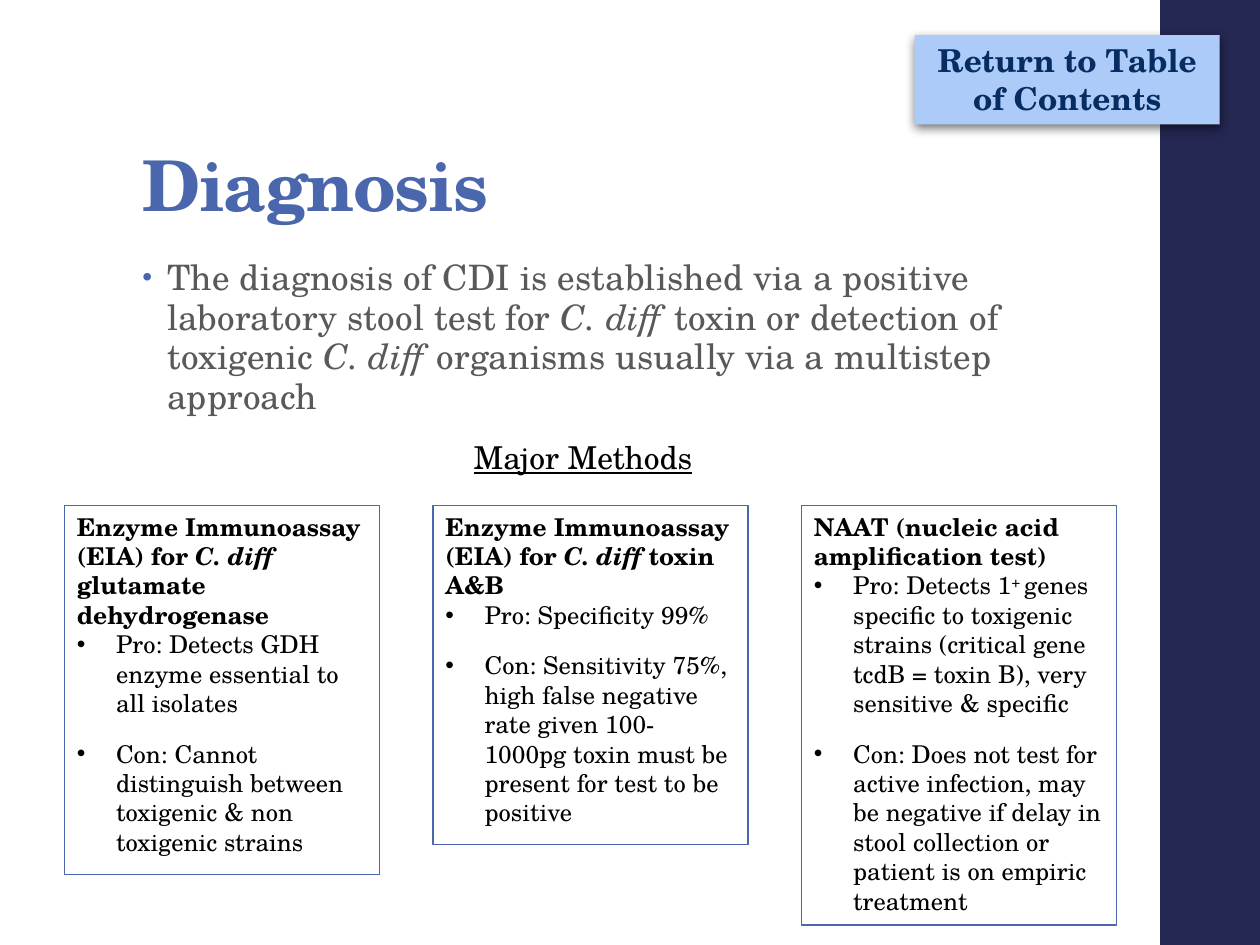
import pptx
import pptx.dml.color
import pptx.enum.shapes
import pptx.enum.text
import pptx.oxml
import pptx.oxml.ns
import pptx.util

Cm = pptx.util.Cm
Pt = pptx.util.Pt
Anchor = pptx.enum.text.MSO_ANCHOR
Align = pptx.enum.text.PP_ALIGN
AutoSize = pptx.enum.text.MSO_AUTO_SIZE

FONT = "TeX Gyre Schola"
COLORS = {
    "navy": "242852",
    "blue": "4A66AC",
    "button": "ACCBF9",
    "button text": "072C62",
    "gray": "595959",
    "black": "000000",
}
CARD_LEFT, CARD_TOP, CARD_WIDTH, CARD_PITCH = 1.3, 10.19, 6.35, 7.43

INTRO = [
    ("The diagnosis of CDI is established via a positive laboratory stool test for ", {}),
    ("C. diff ", {"italic": True}),
    ("toxin or detection of toxigenic ", {}),
    ("C. diff ", {"italic": True}),
    ("organisms usually via a multistep approach", {}),
]
METHODS = [
    (7.44,
     [("Enzyme Immunoassay (EIA) for ", {}), ("C. diff ", {"italic": True}),
      ("glutamate dehydrogenase", {})],
     [("Pro: Detects GDH enzyme essential to all isolates", {})],
     [("Con: Cannot distinguish between toxigenic & non toxigenic strains", {})]),
    (6.83,
     [("Enzyme Immunoassay (EIA) for ", {}), ("C. diff", {"italic": True}),
      (" toxin A&B", {})],
     [("Pro: Specificity 99%", {})],
     [("Con: Sensitivity 75%, high false negative rate given 100-1000pg toxin "
       "must be present for test to be positive", {})]),
    (8.46,
     [("NAAT (nucleic acid amplification test)", {})],
     [("Pro: Detects 1", {}), ("+ ", {"baseline": 30000}),
      ("genes specific to toxigenic strains (critical gene tcdB = toxin B), "
       "very sensitive & specific", {})],
     [("Con: Does not test for active infection, may be negative if delay in "
       "stool collection or patient is on empiric treatment", {})]),
]


def rgb(name):
    return pptx.dml.color.RGBColor.from_string(COLORS[name])


def add_xml(parent, tag, attributes="", content=""):
    namespace = pptx.oxml.ns.nsdecls("a")
    parent.append(pptx.oxml.parse_xml(
        f"<a:{tag} {namespace} {attributes}>{content}</a:{tag}>"))


def add_spans(para, spans, size, color, spacing=None, **style):
    for text, extra in spans:
        span = para.add_run()
        span.text = text
        span.font.name = FONT
        span.font.size = Pt(size)
        span.font.color.rgb = rgb(color)
        options = {**style, **extra}
        baseline = options.pop("baseline", None)
        for name, value in options.items():
            setattr(span.font, name, value)
        properties = span._r.get_or_add_rPr()
        if baseline is not None:
            properties.set("baseline", str(baseline))
        if spacing is not None:
            properties.set("spc", str(spacing))


def set_bullet(para, indent, color=None, percent=100):
    properties = para._p.get_or_add_pPr()
    properties.set("marL", str(Cm(indent)))
    properties.set("indent", str(-Cm(indent)))
    if color:
        add_xml(properties, "buClr", content=f'<a:srgbClr val="{COLORS[color]}"/>')
    add_xml(properties, "buSzPct", f'val="{percent * 1000}"')
    add_xml(properties, "buFont", 'typeface="Arial"')
    add_xml(properties, "buChar", 'char="•"')


def add_text_box(page, left, top, width, height, anchor=Anchor.TOP, wrap=True):
    box = page.shapes.add_textbox(Cm(left), Cm(top), Cm(width), Cm(height))
    box.text_frame.word_wrap = wrap
    box.text_frame.vertical_anchor = anchor
    return box.text_frame.paragraphs[0]


def add_rectangle(page, left, top, width, height, fill=None, line=None):
    box = page.shapes.add_shape(
        pptx.enum.shapes.MSO_SHAPE.RECTANGLE, Cm(left), Cm(top), Cm(width), Cm(height))
    box.shadow.inherit = False
    if fill:
        box.fill.solid()
        box.fill.fore_color.rgb = rgb(fill)
    else:
        box.fill.background()
    if line:
        box.line.color.rgb = rgb(line)
        box.line.width = Pt(0.75)
    else:
        box.line.fill.background()
    box.text_frame.word_wrap = True
    box.text_frame.vertical_anchor = Anchor.TOP
    return box


def add_button(page):
    box = add_rectangle(page, 18.44, 0.71, 6.15, 1.8, fill="button")
    effects = box._element.spPr.find(pptx.oxml.ns.qn("a:effectLst"))
    add_xml(effects, "outerShdw",
            f'blurRad="{Pt(6)}" dist="{Pt(2)}" dir="5400000" rotWithShape="0"',
            f'<a:srgbClr val="{COLORS["black"]}"><a:alpha val="55000"/></a:srgbClr>')
    box.text_frame.auto_size = AutoSize.SHAPE_TO_FIT_TEXT
    para = box.text_frame.paragraphs[0]
    para.alignment = Align.CENTER
    add_spans(para, [("Return to Table of Contents", {})], 18, "button text", bold=True)


def add_method_card(page, column, height, heading, pro, con):
    box = add_rectangle(page, CARD_LEFT + column * CARD_PITCH, CARD_TOP,
                        CARD_WIDTH, height, line="blue")
    frame = box.text_frame
    frame.auto_size = AutoSize.SHAPE_TO_FIT_TEXT
    para = frame.paragraphs[0]
    para.alignment = Align.LEFT
    add_spans(para, heading, 14, "black", bold=True)
    for spans, gap in ((pro, 0), (con, 12)):
        para = frame.add_paragraph()
        para.alignment = Align.LEFT
        set_bullet(para, 0.79)
        para.space_before = Pt(gap)
        add_spans(para, spans, 14, "black")


def main():
    deck = pptx.Presentation()
    deck.slide_width, deck.slide_height = Cm(25.4), Cm(19.05)
    page = deck.slides.add_slide(deck.slide_layouts[6])

    add_rectangle(page, 23.39, 0, 2.01, 19.05, fill="navy")

    title = add_text_box(page, 2.62, 1.02, 20.19, 3.68, anchor=Anchor.BOTTOM)
    title.line_spacing = 0.9
    add_spans(title, [("Diagnosis", {})], 40, "blue", spacing=-70, bold=True)

    intro = add_text_box(page, 2.62, 5.08, 18.54, 3.61)
    set_bullet(intro, 0.5, color="blue", percent=80)
    intro.line_spacing = 0.95
    add_spans(intro, INTRO, 20, "gray", spacing=10)

    add_button(page)

    heading = add_text_box(page, 9.3, 8.71, 5.18, 1.02, wrap=False)
    add_spans(heading, [("Major Methods", {})], 18, "black", underline=True)

    for column, method in enumerate(METHODS):
        add_method_card(page, column, *method)

    deck.save("out.pptx")


if __name__ == "__main__":
    main()
